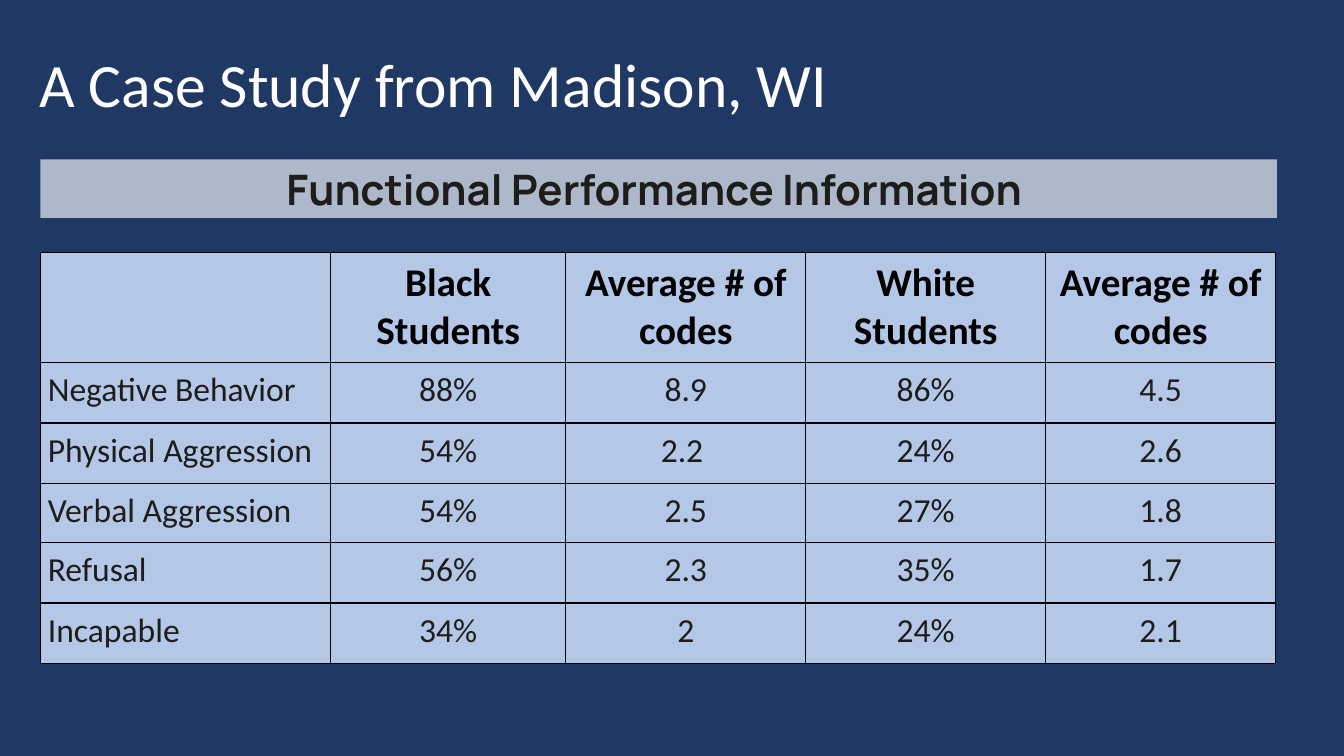
from dataclasses import dataclass

from lxml import etree
from pptx import Presentation
from pptx.dml.color import RGBColor
from pptx.enum import shapes, text
from pptx.oxml import ns
from pptx.util import Pt

LEFT, WIDTH = 28.8, 883.4
INK, BLACK, WHITE = "1D1D1B", "000000", "FFFFFF"
NAVY, BAND_GREY, CELL_BLUE = "203864", "ADB9CA", "B4C7E7"
COLUMN_WIDTHS = [207.4, 168, 171.4, 171.4, 164.2]
ROW_HEIGHTS = [78.6, 43.2, 43.2, 42.2, 43.2, 43.2]
ROWS = [
    ["", "Black Students", "Average # of codes", "White Students", "Average # of codes"],
    ["Negative Behavior", "88%", "8.9", "86%", "4.5"],
    ["Physical Aggression", "54%", "2.2 ", "24%", "2.6"],
    ["Verbal Aggression", "54%", "2.5", "27%", "1.8"],
    ["Refusal", "56%", "2.3", "35%", "1.7"],
    ["Incapable", "34%", "2", "24%", "2.1"],
]


@dataclass(frozen=True)
class Style:
    size: float
    color: str
    font: str = "Calibri"
    bold: bool = False
    align: text.PP_ALIGN = text.PP_ALIGN.CENTER


TITLE = Style(44, WHITE, align=text.PP_ALIGN.LEFT)
BAND = Style(30, INK, "Manrope", True)
HEADER = Style(28, BLACK, bold=True)
LABEL = Style(24, INK, align=text.PP_ALIGN.LEFT)
VALUE = Style(24, INK)


def rgb(color: str) -> RGBColor:
    return RGBColor.from_string(color)


def fill_solid(fill, color: str) -> None:
    fill.solid()
    fill.fore_color.rgb = rgb(color)


def write(tf, words: str, style: Style) -> None:
    tf.text = words
    p = tf.paragraphs[0]
    p.alignment = style.align
    for r in p.runs:
        r.font.name = style.font
        r.font.size = Pt(style.size)
        r.font.bold = style.bold
        r.font.color.rgb = rgb(style.color)


def add_borders(cell, color: str, width: float) -> None:
    """Insert the four border lines ahead of the cell fill, as the schema requires."""
    props = cell._tc.get_or_add_tcPr()
    for i, side in enumerate(("lnL", "lnR", "lnT", "lnB")):
        line = etree.Element(ns.qn(f"a:{side}"), w=str(Pt(width)))
        solid = etree.SubElement(line, ns.qn("a:solidFill"))
        etree.SubElement(solid, ns.qn("a:srgbClr"), val=color)
        props.insert(i, line)


def add_title(s) -> None:
    title = s.shapes.title
    title.left, title.top, title.width, title.height = Pt(20.9), Pt(10.1), Pt(828), Pt(104.4)
    tf = title.text_frame
    write(tf, "A Case Study from Madison, WI", TITLE)
    tf.vertical_anchor = text.MSO_ANCHOR.MIDDLE
    tf.paragraphs[0].line_spacing = 0.9


def add_band(s) -> None:
    sp = s.shapes.add_shape(shapes.MSO_SHAPE.RECTANGLE, Pt(LEFT), Pt(113.8), Pt(WIDTH), Pt(41.8))
    sp.shadow.inherit = False
    fill_solid(sp.fill, BAND_GREY)
    sp.line.fill.background()
    tf = sp.text_frame
    tf.word_wrap = True
    tf.auto_size = text.MSO_AUTO_SIZE.SHAPE_TO_FIT_TEXT
    tf.vertical_anchor = text.MSO_ANCHOR.TOP
    tf.margin_left = tf.margin_right = Pt(5)
    tf.margin_top = tf.margin_bottom = Pt(2.7)
    write(tf, "Functional Performance Information ", BAND)


def add_results_table(s) -> None:
    frame = s.shapes.add_table(len(ROWS), len(COLUMN_WIDTHS), Pt(LEFT), Pt(180.4),
                               Pt(WIDTH), Pt(sum(ROW_HEIGHTS)))
    table = frame.table
    table.first_row = table.horz_banding = False
    for column, width in zip(table.columns, COLUMN_WIDTHS):
        column.width = Pt(width)
    for i, (row, height) in enumerate(zip(table.rows, ROW_HEIGHTS)):
        row.height = Pt(height)
        for j, cell in enumerate(row.cells):
            style = HEADER if i == 0 else LABEL if j == 0 else VALUE
            write(cell.text_frame, ROWS[i][j], style)
            cell.margin_left = cell.margin_right = Pt(5.4)
            cell.margin_top = cell.margin_bottom = Pt(5.1)
            fill_solid(cell.fill, CELL_BLUE)
            add_borders(cell, BLACK, 1)


def main() -> None:
    prs = Presentation()
    prs.slide_width, prs.slide_height = Pt(960), Pt(540)
    s = prs.slides.add_slide(prs.slide_layouts.get_by_name("Title Only"))
    fill_solid(s.background.fill, NAVY)
    add_title(s)
    add_band(s)
    add_results_table(s)
    prs.save("out.pptx")


if __name__ == "__main__":
    main()
